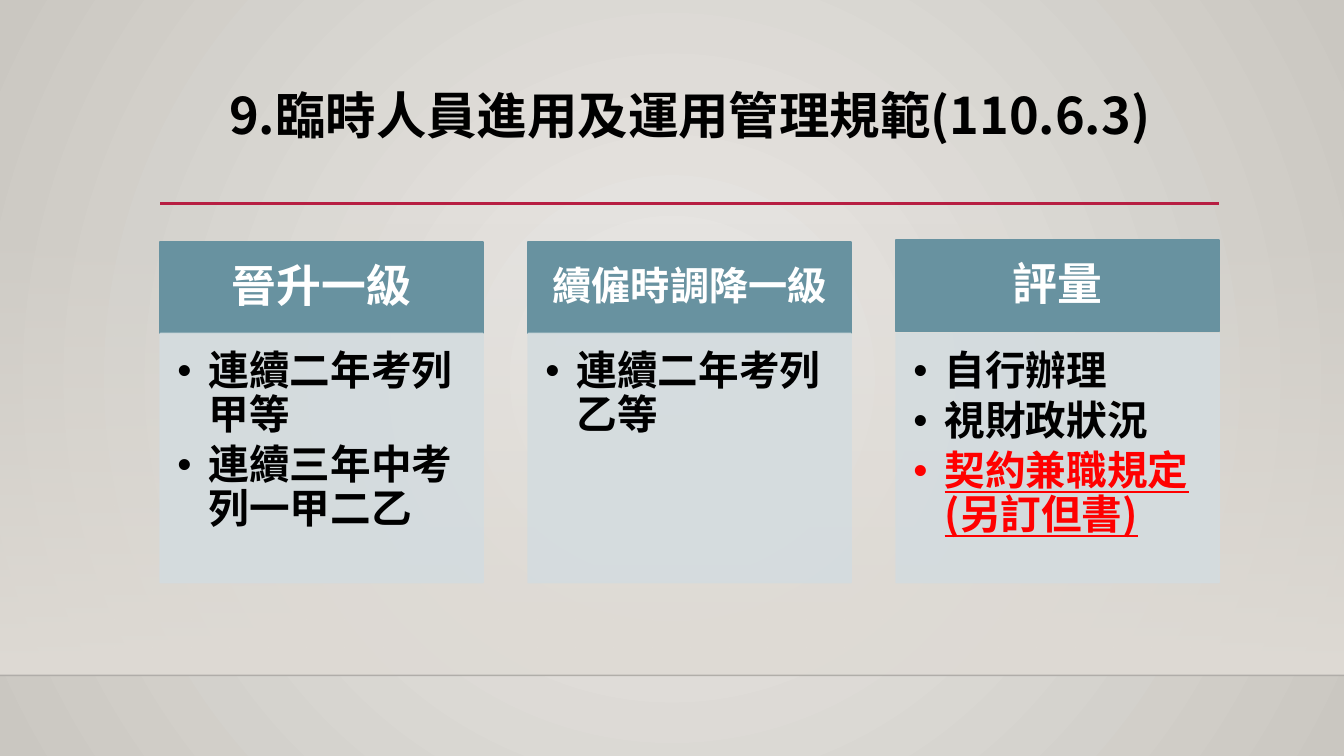
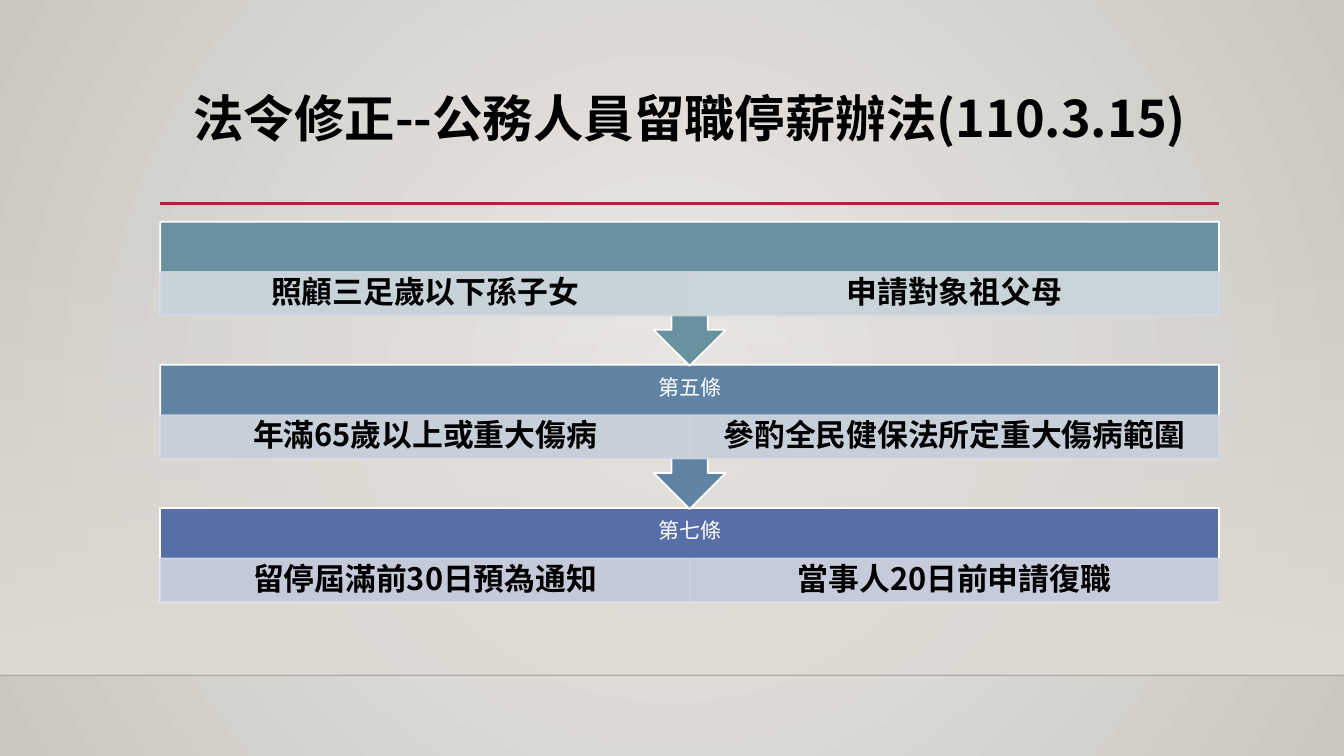
from collections import namedtuple
from dataclasses import dataclass

from lxml import etree
from pptx import Presentation
from pptx import util as u
from pptx.dml.color import RGBColor
from pptx.enum import shapes, text
from pptx.oxml import parse_xml
from pptx.oxml.ns import nsdecls, qn

Box = namedtuple("Box", "left top width height")
Style = namedtuple("Style", "size font color bold")
Item = namedtuple("Item", "text warning", defaults=(False,))
Card = namedtuple("Card", "title size items lift", defaults=(0,))
Step = namedtuple("Step", "label color cells")


@dataclass(frozen=True)
class Theme:
    width: float = 13.33
    height: float = 7.5
    margin: float = 1.59
    content_width: float = 10.5
    rule_top: float = 2.02
    floor_top: float = 6.7
    cjk: str = "Noto Sans CJK SC"
    latin: str = "Cabin"
    black: str = "000000"
    white: str = "FFFFFF"
    accent: str = "B71E42"
    warning: str = "FF0000"
    floor_line: str = "000001"
    glow: str = "ECEAE7"
    edge: str = "CAC7C1"
    haze: str = "DFDBD5"
    teal: str = "6892A0"
    blue: str = "6083A3"
    indigo: str = "586EA6"
    pale_teal: str = "D4DCDF"
    pale_line: str = "D1D5E1"
    title_size: int = 36
    body_size: int = 29
    cell_size: int = 22
    label_size: int = 15
    outline: float = 1.25


THEME = Theme()
TITLE = Style(THEME.title_size, THEME.cjk, THEME.black, True)
BODY = Style(THEME.body_size, THEME.cjk, THEME.black, True)
CELL = Style(THEME.cell_size, THEME.cjk, THEME.black, True)
LABEL = Style(THEME.label_size, THEME.latin, THEME.white, False)


def inches(values):
    return [u.Inches(value) for value in values]


def set_gradient(fill, stops, direction):
    """Give a fill (colour, opacity) stops spread evenly from 0 to 100 percent."""
    fill.gradient()
    last = len(stops) - 1
    stop_xml = "".join(
        f'<a:gs pos="{index * 100000 // last}"><a:srgbClr val="{color}">'
        f'<a:alpha val="{opacity * 1000}"/></a:srgbClr></a:gs>'
        for index, (color, opacity) in enumerate(stops))
    gradient = parse_xml(f'<a:gradFill {nsdecls("a")} rotWithShape="1">'
                         f'<a:gsLst>{stop_xml}</a:gsLst>{direction}</a:gradFill>')
    owner = fill._xPr
    owner.replace(owner.find(qn("a:gradFill")), gradient)


def set_opacity(shape, percent):
    for color in shape._element.spPr.iter(qn("a:srgbClr")):
        etree.SubElement(color, qn("a:alpha"), val=str(percent * 1000))


def add_panel(slide, box, fill, line, opacity=100, kind=shapes.MSO_SHAPE.RECTANGLE):
    panel = slide.shapes.add_shape(kind, *inches(box))
    panel.shadow.inherit = False
    panel.fill.solid()
    panel.fill.fore_color.rgb = RGBColor.from_string(fill)
    panel.line.color.rgb = RGBColor.from_string(line)
    panel.line.width = u.Pt(THEME.outline)
    if opacity < 100:
        set_opacity(panel, opacity)
    return panel


def add_rule(slide, left, right, top, color, width):
    rule = slide.shapes.add_connector(
        shapes.MSO_CONNECTOR.STRAIGHT, *inches((left, top, right, top)))
    rule.line.color.rgb = RGBColor.from_string(color)
    rule.line.width = u.Pt(width)
    etree.SubElement(rule._element.spPr, qn("a:effectLst"))
    return rule


def prepare_frame(shape, insets, anchor):
    frame = shape.text_frame
    frame.word_wrap = True
    frame.vertical_anchor = anchor
    (frame.margin_left, frame.margin_top,
     frame.margin_right, frame.margin_bottom) = inches(insets)
    return frame


def write(paragraph, words, style, align=text.PP_ALIGN.CENTER):
    paragraph.text = words
    paragraph.alignment = align
    paragraph.line_spacing = 0.9
    for run in paragraph.runs:
        font = run.font
        font.size = u.Pt(style.size)
        font.bold = style.bold
        font.name = style.font
        font.color.rgb = RGBColor.from_string(style.color)
        etree.SubElement(run._r.get_or_add_rPr(), qn("a:ea"), typeface=style.font)


def write_bullets(frame, items):
    for index, item in enumerate(items):
        paragraph = frame.paragraphs[0] if index == 0 else frame.add_paragraph()
        style = BODY._replace(color=THEME.warning) if item.warning else BODY
        write(paragraph, item.text, style, text.PP_ALIGN.LEFT)
        paragraph.space_after = u.Pt(4.4)
        properties = paragraph._p.get_or_add_pPr()
        properties.set("marL", str(u.Inches(0.31)))
        properties.set("indent", str(u.Inches(-0.31)))
        etree.SubElement(properties, qn("a:buFont"), typeface="Arial")
        etree.SubElement(properties, qn("a:buChar"), char="•")
        if item.warning:
            paragraph.runs[0].font.underline = True


def add_base_slide(presentation, title, title_top):
    """Add a slide with the haze, the floor line, the title and its rule."""
    slide = presentation.slides.add_slide(presentation.slide_layouts[6])
    haze_top = 2.21
    haze = add_panel(slide, Box(0, haze_top, THEME.width, THEME.floor_top - haze_top),
                     THEME.haze, THEME.haze)
    haze.line.fill.background()
    set_gradient(haze.fill, [(THEME.haze, 0), (THEME.haze, 100)],
                 '<a:lin ang="5400000" scaled="0"/>')
    floor = add_rule(slide, 0, THEME.width, THEME.floor_top, THEME.floor_line, 1)
    set_opacity(floor, 20)
    add_rule(slide, THEME.margin, THEME.margin + THEME.content_width,
             THEME.rule_top, THEME.accent, 2.5)
    title_box = slide.shapes.add_textbox(
        *inches((THEME.margin, title_top, THEME.content_width, 1.15)))
    frame = prepare_frame(title_box, (0.1, 0.05, 0.1, 0.05), text.MSO_ANCHOR.TOP)
    write(frame.paragraphs[0], title, TITLE)
    return slide


def add_card(slide, box, card):
    header_height = 0.91
    header = add_panel(
        slide, Box(box.left, box.top - card.lift, box.width, header_height),
        THEME.teal, THEME.teal)
    frame = prepare_frame(header, (0.22, 0.12, 0.22, 0.12), text.MSO_ANCHOR.MIDDLE)
    write(frame.paragraphs[0], card.title,
          Style(card.size, THEME.cjk, THEME.white, True))
    body = add_panel(
        slide, Box(box.left, box.top + header_height, box.width,
                   box.height - header_height),
        THEME.pale_teal, THEME.pale_teal, 90)
    frame = prepare_frame(body, (0.17, 0.17, 0.23, 0.25), text.MSO_ANCHOR.TOP)
    write_bullets(frame, card.items)


def add_cards(slide, box, cards, gap=0.45):
    width = (box.width - gap * (len(cards) - 1)) / len(cards)
    for index, card in enumerate(cards):
        left = box.left + index * (width + gap)
        add_card(slide, Box(left, box.top, width, box.height), card)


def add_step(slide, box, step, kind):
    """Add a labelled band, and the pale cells half an inch below its top."""
    band = add_panel(slide, box, step.color, THEME.white, kind=kind)
    if step.label:
        frame = prepare_frame(band, (0.12,) * 4, text.MSO_ANCHOR.TOP)
        write(frame.paragraphs[0], step.label, LABEL)
    width = box.width / len(step.cells)
    for index, (words, color) in enumerate(step.cells):
        cell = add_panel(
            slide, Box(box.left + index * width, box.top + 0.5, width, 0.43),
            color, THEME.pale_line, 90)
        frame = prepare_frame(cell, (0.17, 0.03, 0.17, 0.03), text.MSO_ANCHOR.MIDDLE)
        write(frame.paragraphs[0], words, CELL)


def add_steps(slide, box, steps, band_height=0.93):
    """Stack the steps, last one first, so that each arrow overlaps the next band."""
    last = len(steps) - 1
    pitch = (box.height - band_height) / last
    for index in range(last, -1, -1):
        if index == last:
            kind, height = shapes.MSO_SHAPE.RECTANGLE, band_height
        else:
            kind, height = shapes.MSO_SHAPE.DOWN_ARROW_CALLOUT, pitch + 0.01
        add_step(slide, Box(box.left, box.top + index * pitch, box.width, height),
                 steps[index], kind)


CARDS = [
    Card("晉升一級", 32, [Item("連續二年考列甲等"), Item("連續三年中考列一甲二乙")]),
    Card("續僱時調降一級", 28, [Item("連續二年考列乙等")]),
    Card("評量", 32, [Item("自行辦理"), Item("視財政狀況"),
                    Item("契約兼職規定(另訂但書)", warning=True)], lift=0.02),
]
STEPS = [
    Step("", THEME.teal,
         [("照顧三足歲以下孫子女", "D3DBE0"), ("申請對象祖父母", THEME.pale_teal)]),
    Step("第五條", THEME.blue,
         [("年滿65歲以上或重大傷病", "D2D8E0"),
          ("參酌全民健保法所定重大傷病範圍", "D3D9E0")]),
    Step("第七條", THEME.indigo,
         [("留停屆滿前30日預為通知", THEME.pale_line),
          ("當事人20日前申請復職", "D2D6E1")]),
]


def main():
    presentation = Presentation()
    presentation.slide_width = u.Inches(THEME.width)
    presentation.slide_height = u.Inches(THEME.height)
    set_gradient(presentation.slide_master.background.fill,
                 [(THEME.glow, 100), (THEME.edge, 100)],
                 '<a:path path="circle"><a:fillToRect l="50000" t="50000" '
                 'r="50000" b="50000"/></a:path>')

    slide = add_base_slide(presentation, "9.臨時人員進用及運用管理規範(110.6.3)", 0.85)
    add_cards(slide, Box(THEME.margin, 2.4, THEME.content_width, 3.38), CARDS)

    slide = add_base_slide(
        presentation, "法令修正--公務人員留職停薪辦法(110.3.15)", 0.88)
    add_steps(slide, Box(THEME.margin, 2.2, THEME.content_width, 3.77), STEPS)

    presentation.save("out.pptx")


if __name__ == "__main__":
    main()
